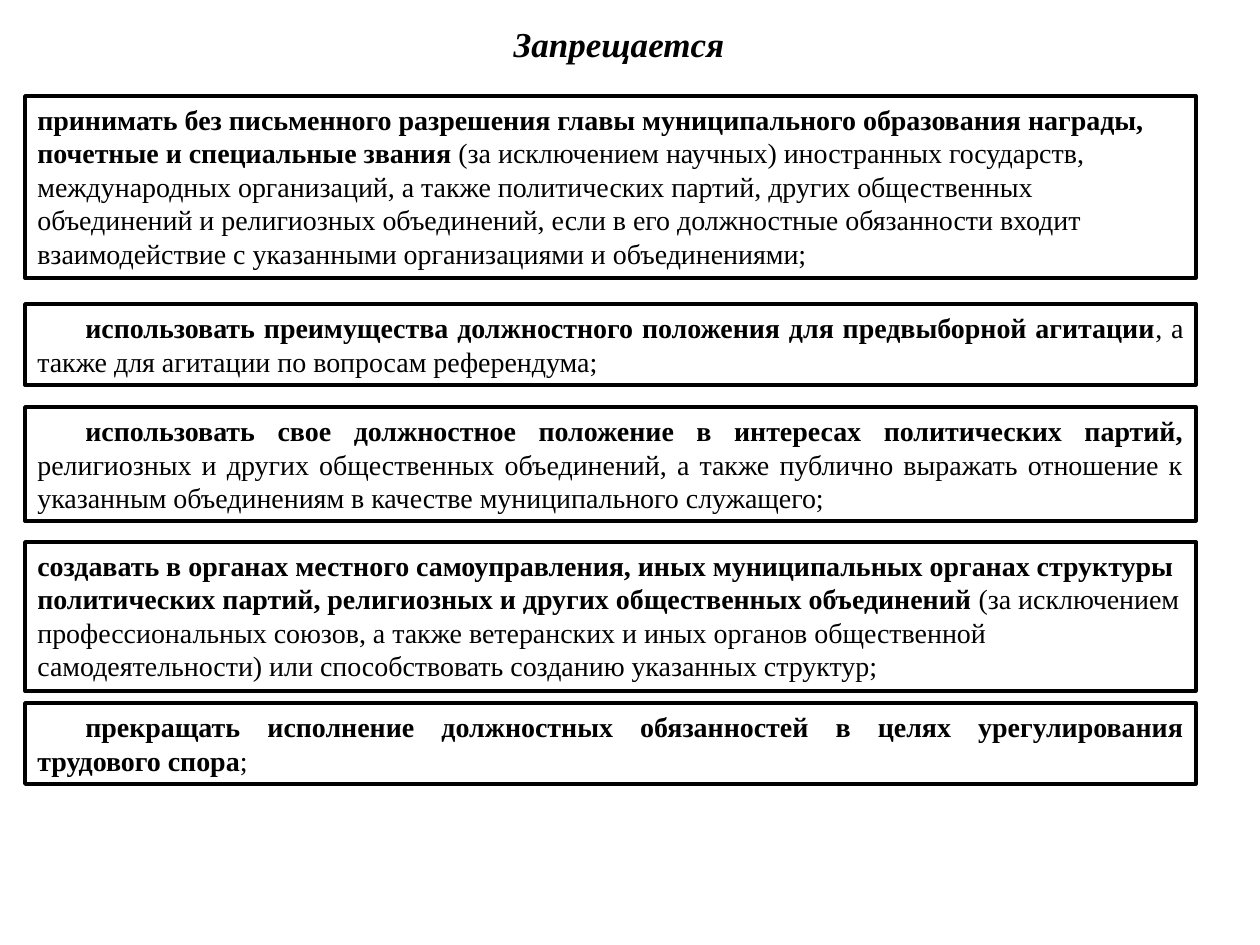
"""Build a slide listing what municipal employees are forbidden to do."""
from pptx import Presentation
from pptx.dml.color import RGBColor
from pptx.enum.shapes import MSO_SHAPE as SHAPE
from pptx.enum.text import MSO_ANCHOR as ANCHOR, MSO_AUTO_SIZE as AUTO, PP_ALIGN as ALIGN
from pptx.util import Pt

PX = 914400 / 126


def px(n):
    return round(n * PX)


def style(r, size, bold, italic=False, color="000000"):
    r.font.name = "Times New Roman"
    r.font.size = Pt(size)
    r.font.bold = bold
    r.font.italic = italic
    r.font.color.rgb = RGBColor.from_string(color)


prs = Presentation()
prs.slide_width, prs.slide_height = px(1260), px(945)
s = prs.slides.add_slide(prs.slide_layouts[5])

title = s.shapes.title
title.left, title.top, title.width, title.height = px(501), px(16), px(238), px(55)
tf = title.text_frame
tf.text = "Запрещается"
tf.word_wrap = False
tf.auto_size = AUTO.SHAPE_TO_FIT_TEXT
tf.vertical_anchor = ANCHOR.TOP
p = tf.paragraphs[0]
p.alignment = ALIGN.LEFT
style(p.runs[0], 20, True, True)

bans = [
    (96, 182, False,
     "принимать без письменного разрешения главы муниципального образования награды, "
     "почетные и специальные звания ",
     "(за исключением научных) иностранных государств, международных организаций, "
     "а также политических партий, других общественных объединений и религиозных "
     "объединений, если в его должностные обязанности входит взаимодействие "
     "с указанными организациями и объединениями;"),
    (304, 81, True,
     "использовать преимущества должностного положения для предвыборной агитации",
     ", а также для агитации по вопросам референдума;"),
    (407, 114, True,
     "использовать свое должностное положение в интересах политических партий,",
     " религиозных и других общественных объединений, а также публично выражать "
     "отношение к указанным объединениям в качестве муниципального служащего;"),
    (542, 149, False,
     "создавать в органах местного самоуправления, иных муниципальных органах "
     "структуры политических партий, религиозных и других общественных объединений ",
     "(за исключением профессиональных союзов, а также ветеранских и иных органов "
     "общественной самодеятельности) или способствовать созданию указанных структур;"),
    (703, 81, True,
     "прекращать исполнение должностных обязанностей в целях урегулирования "
     "трудового спора",
     ";"),
]

for top, height, justified, ban, detail in bans:
    sp = s.shapes.add_shape(SHAPE.RECTANGLE, px(25), px(top), px(1171), px(height))
    sp.shadow.inherit = False
    sp.fill.solid()
    sp.fill.fore_color.rgb = RGBColor.from_string("FFFFFF")
    sp.line.color.rgb = RGBColor.from_string("000000")
    sp.line.width = Pt(2)
    tf = sp.text_frame
    tf.word_wrap = True
    tf.auto_size = AUTO.SHAPE_TO_FIT_TEXT
    tf.vertical_anchor = ANCHOR.MIDDLE if justified else ANCHOR.TOP
    p = tf.paragraphs[0]
    p.alignment = ALIGN.JUSTIFY if justified else ALIGN.LEFT
    if justified:
        p._p.get_or_add_pPr().set("indent", str(px(48)))
    for text, bold in ((ban, True), (detail, False)):
        r = p.add_run()
        r.text = text
        style(r, 16, bold)

prs.save("out.pptx")
